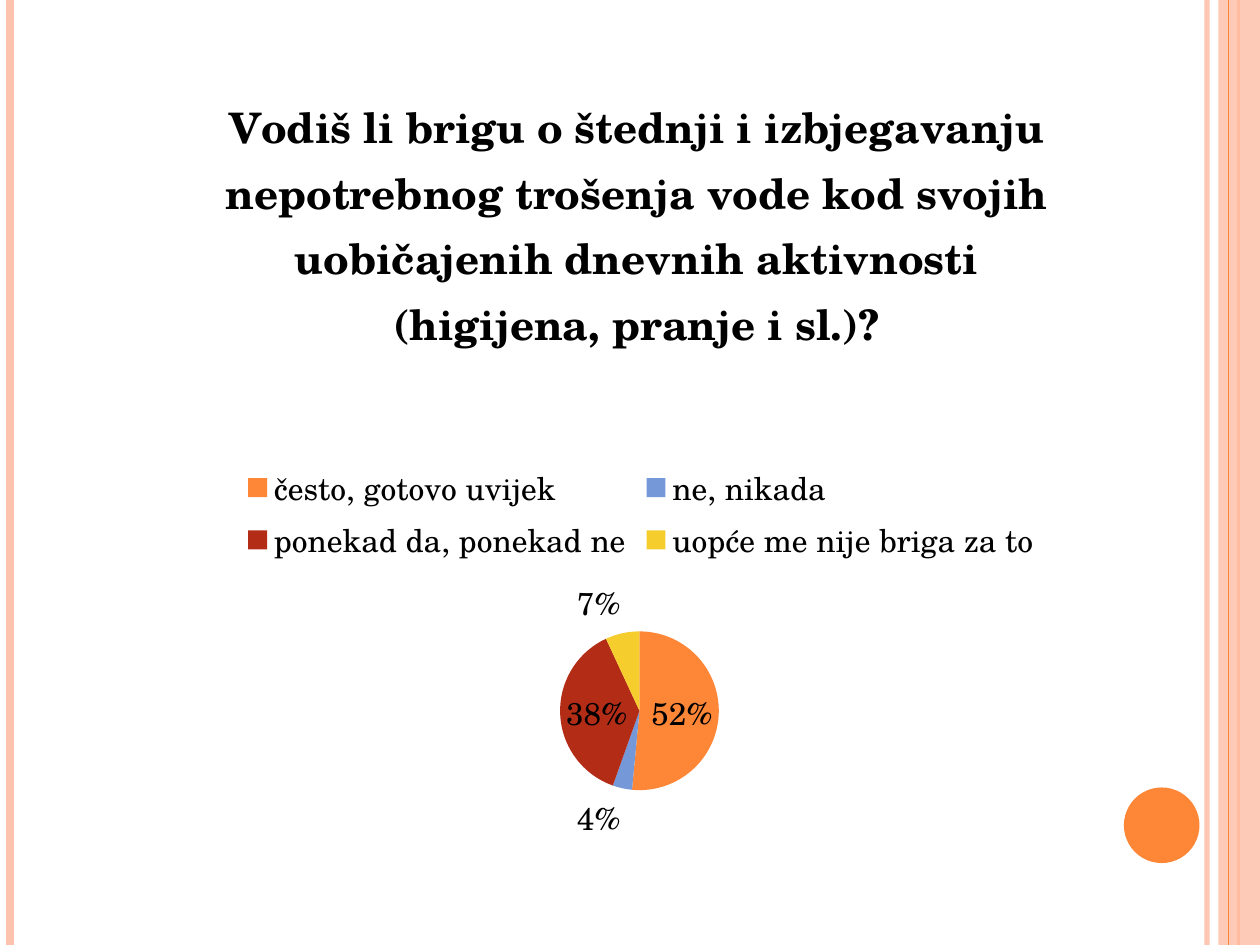
from lxml.etree import SubElement
from pptx import Presentation
from pptx.chart.data import CategoryChartData
from pptx.dml.color import RGBColor
from pptx.enum.chart import XL_CHART_TYPE, XL_LABEL_POSITION, XL_LEGEND_POSITION
from pptx.enum.shapes import MSO_CONNECTOR, MSO_SHAPE
from pptx.enum.text import PP_ALIGN
from pptx.oxml import parse_xml
from pptx.oxml.ns import nsdecls, qn
from pptx.util import Inches, Pt

W, H = 10, 7.5
FONT = "TeX Gyre Schola"
COLORS = {"peach": "FEC3AE", "orange": "FE8637", "blue": "7598D9",
          "red": "B32C16", "yellow": "F5CD2D", "text": "000000"}
QUESTION = ["Vodiš li brigu o štednji i izbjegavanju nepotrebnog trošenja vode "
            "kod svojih uobičajenih dnevnih aktivnosti",
            "(higijena, pranje i sl.)?"]
ANSWERS = [("često, gotovo uvijek", 52, "orange"),
           ("ne, nikada", 4, "blue"),
           ("ponekad da, ponekad ne", 38, "red"),
           ("uopće me nije briga za to", 7, "yellow")]


def rgb(name):
    return RGBColor.from_string(COLORS[name])


def set_font(font, size, bold=False, color="text"):
    font.name, font.size, font.bold = FONT, Pt(size), bold
    font.color.rgb = rgb(color)


def write(tf, lines, size=18, bold=False, color="text", spacing=1.0):
    for i, line in enumerate(lines):
        p = tf.add_paragraph() if i else tf.paragraphs[0]
        p.alignment = PP_ALIGN.CENTER
        p.line_spacing = spacing
        r = p.add_run()
        r.text = line
        set_font(r.font, size, bold, color)


def set_alpha(fill_parent, percent):
    clr = next(fill_parent.iter(qn("a:srgbClr")))
    SubElement(clr, qn("a:alpha"), val=str(percent * 1000))


def add_stripe(s, x, color, width, alpha=None):
    line = s.shapes.add_connector(MSO_CONNECTOR.STRAIGHT, Inches(x), 0, Inches(x), Inches(H))
    line.line.color.rgb = rgb(color)
    line.line.width = Pt(width)
    props = line._element.spPr
    SubElement(props, qn("a:effectLst"))
    if alpha:
        set_alpha(props, alpha)


def add_block(s, kind, x, y, w, h, color, alpha=None):
    sp = s.shapes.add_shape(kind, Inches(x), Inches(y), Inches(w), Inches(h))
    sp.shadow.inherit = False
    sp.fill.solid()
    sp.fill.fore_color.rgb = rgb(color)
    sp.line.fill.background()
    if alpha:
        set_alpha(sp._element.spPr, alpha)


def add_frame(s):
    add_stripe(s, 9.58, "peach", 3, alpha=93)
    add_stripe(s, 0.08, "peach", 4.5)
    add_stripe(s, 9.83, "orange", 1.5)
    add_block(s, MSO_SHAPE.RECTANGLE, W - 0.33, 0, 0.33, H, "peach", alpha=87)
    add_stripe(s, 9.75, "orange", 0.75)
    add_block(s, MSO_SHAPE.OVAL, 8.92, 6.25, 0.6, 0.6, "orange")


def place(part, before, **shares):
    for old in part.findall(qn("c:layout")):
        part.remove(old)
    layout = parse_xml(f"<c:layout {nsdecls('c')}><c:manualLayout/></c:layout>")
    manual = layout[0]
    if "w" in shares:
        SubElement(manual, qn("c:layoutTarget"), val="inner")
    for mode in ("xMode", "yMode"):
        SubElement(manual, qn(f"c:{mode}"), val="edge")
    for key, share in shares.items():
        SubElement(manual, qn(f"c:{key}"), val=str(share / 100))
    part.find(qn(before)).addprevious(layout)


def add_pie(s):
    data = CategoryChartData()
    data.categories = [name for name, _, _ in ANSWERS]
    data.add_series(" ".join(QUESTION), [value for _, value, _ in ANSWERS])
    chart = s.shapes.add_chart(XL_CHART_TYPE.PIE, Inches(0.67), Inches(0.52),
                               Inches(8.82), Inches(6.3), data).chart
    set_font(chart.font, 18)
    chart.has_title = True
    title = chart.chart_title
    title.include_in_layout = False
    write(title.text_frame, QUESTION, size=24, bold=True, spacing=1.5)
    chart.has_legend = True
    legend = chart.legend
    legend.position = XL_LEGEND_POSITION.TOP
    legend.include_in_layout = False
    set_font(legend.font, 18)
    plot = chart.plots[0]
    plot.vary_by_categories = True
    for i, (_, _, color) in enumerate(ANSWERS):
        fill = plot.series[0].points[i].format.fill
        fill.solid()
        fill.fore_color.rgb = rgb(color)
    plot.has_data_labels = True
    labels = plot.data_labels
    labels.show_value = True
    labels.number_format, labels.number_format_is_linked = '0"%"', False
    labels.position = XL_LABEL_POSITION.BEST_FIT
    set_font(labels.font, 18)
    place(title._element, "c:overlay", x=12.35, y=2.75)
    place(legend._element, "c:overlay", x=13.8, y=49.5)
    place(plot._element.getparent(), "c:pieChart", x=42.8, y=71.3, w=14.3, h=20)


def main():
    prs = Presentation()
    prs.slide_width, prs.slide_height = Inches(W), Inches(H)
    s = prs.slides.add_slide(prs.slide_layouts[6])
    add_frame(s)
    add_pie(s)
    prs.save("out.pptx")


if __name__ == "__main__":
    main()
